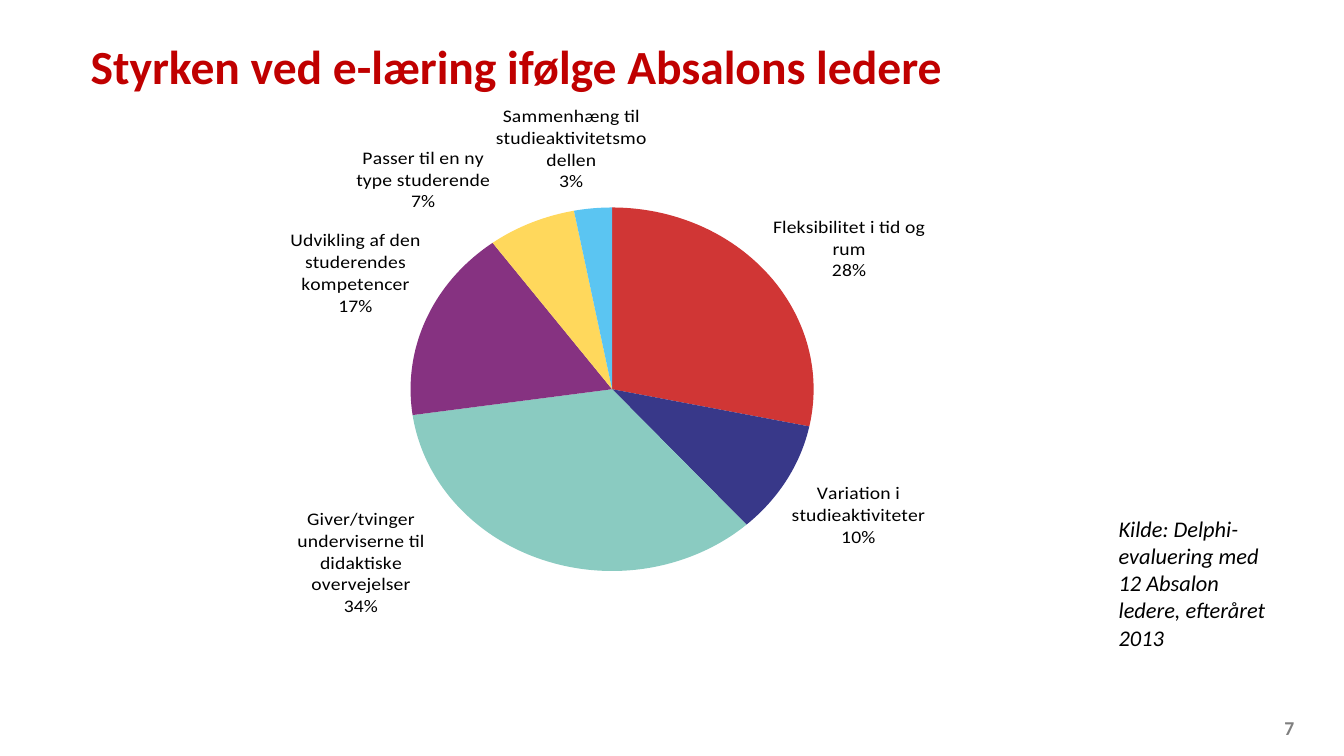
from copy import deepcopy

from lxml import etree
from pptx import Presentation
from pptx.chart.data import CategoryChartData
from pptx.dml.color import RGBColor
from pptx.enum.chart import XL_CHART_TYPE, XL_LABEL_POSITION
from pptx.enum.text import MSO_ANCHOR, PP_ALIGN
from pptx.oxml.ns import qn
from pptx.util import Pt

PIE = XL_CHART_TYPE.PIE
OUTSIDE = XL_LABEL_POSITION.OUTSIDE_END
LEFT, RIGHT = PP_ALIGN.LEFT, PP_ALIGN.RIGHT
TOP, MIDDLE, BOTTOM = MSO_ANCHOR.TOP, MSO_ANCHOR.MIDDLE, MSO_ANCHOR.BOTTOM

FONT = "Calibri"
COLORS = {
    "title": "C00000", "text": "000000", "number": "7F7F7F",
    "red": "D03635", "blue": "383889", "teal": "8ACBC1",
    "purple": "863281", "yellow": "FFD85C", "sky": "5BC5F2",
}
# name, share, colour, label shift as fractions of the chart frame
STRENGTHS = [
    ("Fleksibilitet i tid og rum", 28, "red", (0.0, 0.02)),
    ("Variation i studieaktiviteter", 10, "blue", None),
    ("Giver/tvinger underviserne til didaktiske overvejelser", 34, "teal", (-0.15, -0.1)),
    ("Udvikling af den studerendes kompetencer", 17, "purple", None),
    ("Passer til en ny type studerende", 7, "yellow", (-0.05, -0.01)),
    ("Sammenhæng til studieaktivitetsmodellen", 3, "sky", (0.07, -0.02)),
]
PLOT_AREA = {"x": 0.195, "y": 0.213, "w": 0.519, "h": 0.698}


def rgb(name):
    return RGBColor.from_string(COLORS[name])


def place(sp, left, top, width, height):
    sp.left, sp.top, sp.width, sp.height = Pt(left), Pt(top), Pt(width), Pt(height)


def set_font(font, size, color, bold=False, italic=False):
    font.name, font.size = FONT, Pt(size)
    font.bold, font.italic = bold, italic
    font.color.rgb = rgb(color)


def write(sp, text, size, color, anchor=TOP, align=LEFT, inset=7.2,
          spacing=1.0, bold=False, italic=False):
    tf = sp.text_frame
    tf.word_wrap = True
    tf.vertical_anchor = anchor
    tf.margin_left = tf.margin_right = tf.margin_top = tf.margin_bottom = Pt(inset)
    p = tf.paragraphs[0]
    p.alignment = align
    p.line_spacing = spacing
    r = p.add_run()
    r.text = text
    set_font(r.font, size, color, bold, italic)
    return p


def add_text(slide, box, *args, **kwargs):
    sp = slide.shapes.add_textbox(*(Pt(v) for v in box))
    return write(sp, *args, **kwargs)


def make_layout(settings):
    layout = etree.Element(qn("c:layout"))
    manual = etree.SubElement(layout, qn("c:manualLayout"))
    for tag, value in settings.items():
        etree.SubElement(manual, qn(f"c:{tag}")).set("val", str(value))
    return layout


def set_plot_layout(chart):
    """Fix the inner plot area as fractions of the chart frame."""
    plot_area = chart._chartSpace.chart.plotArea
    for old in plot_area.findall(qn("c:layout")):
        plot_area.remove(old)
    plot_area.insert(0, make_layout(
        {"layoutTarget": "inner", "xMode": "edge", "yMode": "edge", **PLOT_AREA}))


def format_labels(labels):
    labels.show_category_name = labels.show_percentage = True
    labels.show_value = False
    labels.number_format, labels.number_format_is_linked = "0%", False
    labels.position = OUTSIDE
    set_font(labels.font, 14, "text")
    root = labels._element
    for leader in root.findall(qn("c:showLeaderLines")):
        leader.set("val", "0")
    separator = etree.Element(qn("c:separator"))
    separator.text = "\n"
    root.find(qn("c:showBubbleSize")).addnext(separator)


def shift_labels(labels):
    """Move single labels away from their automatic place."""
    root = labels._element
    shared = [el for el in root if el.tag != qn("c:showLeaderLines")]
    shifts = [(i, row[3]) for i, row in enumerate(STRENGTHS) if row[3]]
    for position, (i, (dx, dy)) in enumerate(shifts):
        label = etree.Element(qn("c:dLbl"))
        etree.SubElement(label, qn("c:idx")).set("val", str(i))
        label.append(make_layout({"x": dx, "y": dy}))
        label.extend(deepcopy(el) for el in shared)
        root.insert(position, label)


def add_pie(slide, box):
    data = CategoryChartData()
    data.categories = [row[0] for row in STRENGTHS]
    data.add_series("Series 1", [row[1] for row in STRENGTHS])
    chart = slide.shapes.add_chart(PIE, *(Pt(v) for v in box), data).chart
    chart.has_title = chart.has_legend = False
    set_font(chart.font, 14, "text")
    set_plot_layout(chart)

    plot = chart.plots[0]
    plot.vary_by_categories = True
    series = plot.series[0]
    for i, row in enumerate(STRENGTHS):
        fill = series.points[i].format.fill
        fill.solid()
        fill.fore_color.rgb = rgb(row[2])
    format_labels(series.data_labels)
    shift_labels(series.data_labels)


def main():
    prs = Presentation()
    prs.slide_width, prs.slide_height = Pt(960), Pt(540)
    slide = prs.slides.add_slide(prs.slide_layouts[5])

    title = slide.shapes.title
    place(title, 57.6, 13, 674, 73.4)
    write(title, "Styrken ved e-læring ifølge Absalons ledere", 34, "title",
          anchor=MIDDLE, spacing=0.88, bold=True)

    add_pie(slide, (185, 69, 555, 412.5))
    add_text(slide, (893.5, 514, 31, 14.4), "7", 14, "number",
             anchor=BOTTOM, align=RIGHT, inset=0, bold=True)
    source = add_text(slide, (782, 360.7, 141.8, 105),
                      "Kilde: Delphi-evaluering med 12 Absalon ledere, efteråret 2013",
                      16, "text", spacing=1.01, italic=True)
    source._p.get_or_add_pPr().set("marL", str(Pt(10)))
    prs.save("out.pptx")


if __name__ == "__main__":
    main()
